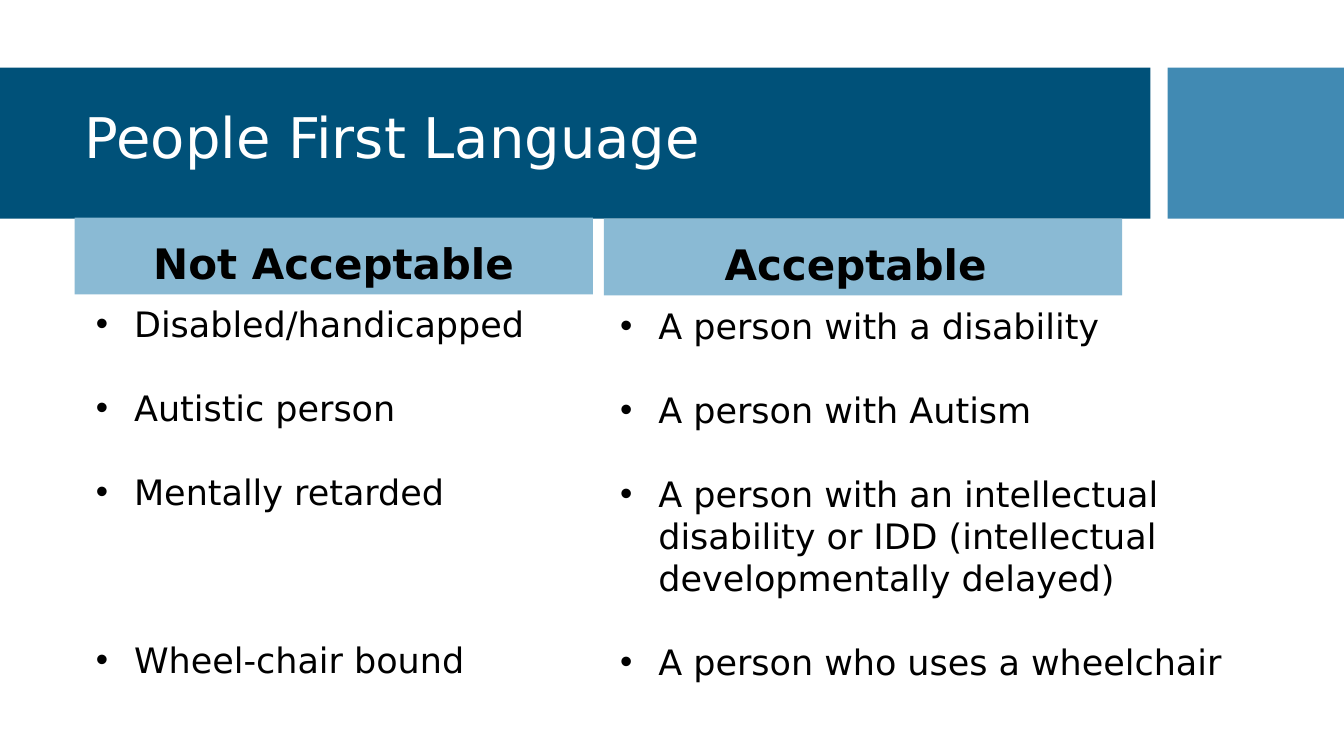
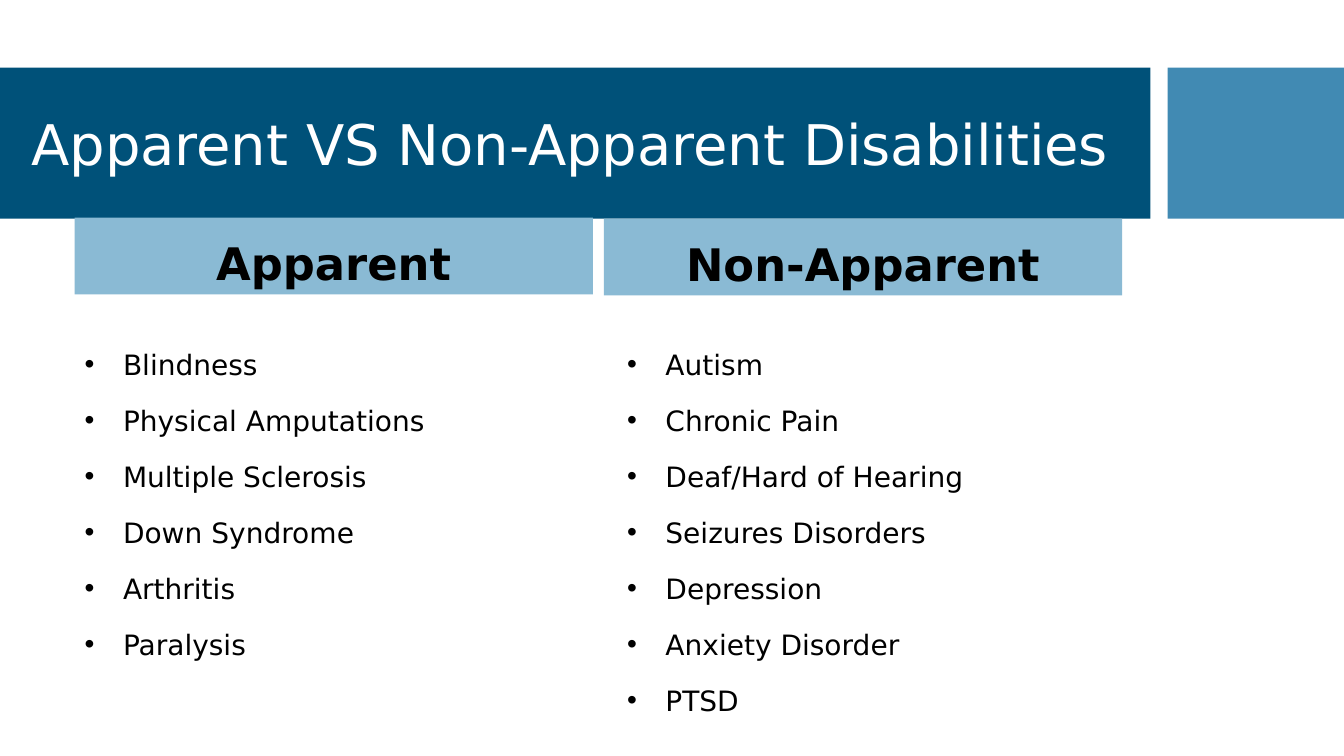
"""Build two comparison slides with a shared banded title style."""
import lxml.etree
import pptx
import pptx.dml.color
import pptx.enum.shapes
import pptx.enum.text
import pptx.oxml.ns
import pptx.util

Inches = pptx.util.Inches
Pt = pptx.util.Pt
Align = pptx.enum.text.PP_ALIGN
Anchor = pptx.enum.text.MSO_ANCHOR


class Deck:
    font = "DejaVu Sans"
    hues = {"band": "005179", "block": "418AB3", "head": "8ABAD4",
            "light": "FFFFFF", "text": "000000"}
    bands = [("band", 0, 11.41), ("block", 11.58, 1.75)]

    def __init__(self):
        self.file = pptx.Presentation()
        self.file.slide_width = Inches(13.33)
        self.file.slide_height = Inches(7.5)
        self.layout = self.file.slide_layouts[4]
        self.slide = None

    def color(self, name):
        return pptx.dml.color.RGBColor.from_string(self.hues[name])

    def paint(self, shape, hue):
        shape.fill.solid()
        shape.fill.fore_color.rgb = self.color(hue)

    def page(self):
        first = self.slide is None
        self.slide = self.file.slides.add_slide(self.layout)
        if first:
            for band in self.bands:
                self.band(*band)

    def band(self, hue, left, width):
        shape = self.slide.shapes.add_shape(
            pptx.enum.shapes.MSO_SHAPE.RECTANGLE,
            Inches(left), Inches(0.67), Inches(width), Inches(1.5))
        shape.shadow.inherit = False
        self.paint(shape, hue)
        shape.line.fill.background()
        self.layout.shapes.element.insert(2, shape.element)

    def place(self, slot, box, anchor):
        shape = self.slide.placeholders[slot]
        shape.left, shape.top, shape.width, shape.height = map(Inches, box)
        frame = shape.text_frame
        frame.word_wrap = True
        frame.auto_size = pptx.enum.text.MSO_AUTO_SIZE.NONE
        frame.vertical_anchor = anchor
        return shape

    def style(self, para, size, hue="text", bold=False, align=Align.LEFT,
              lead=1.0, gap=0):
        para.alignment = align
        para.line_spacing = lead
        para.space_before = Pt(gap)
        para.space_after = Pt(0)
        para.font.name = self.font
        para.font.size = Pt(size)
        para.font.bold = bold
        para.font.color.rgb = self.color(hue)

    def title(self, text, left, top):
        shape = self.place(0, (left, top, 11.11, 1.18), Anchor.MIDDLE)
        shape.text_frame.text = text
        self.style(shape.text_frame.paragraphs[0], 40, "light", lead=0.9)

    def head(self, slot, text, left, top, size):
        shape = self.place(slot, (left, top, 5.14, 0.76), Anchor.MIDDLE)
        self.paint(shape, "head")
        shape.text_frame.text = text
        self.style(shape.text_frame.paragraphs[0], size, bold=True,
                   align=Align.CENTER, lead=1.25)

    def heads(self, left, right, size):
        self.head(1, left, 0.74, 2.16, size)
        self.head(3, right, 5.99, 2.17, size)

    def items(self, slot, box, texts, size, gap, lead=1.0, last=None):
        frame = self.place(slot, box, Anchor.TOP).text_frame
        frame.text = "\n".join(texts)
        gaps = [0] + [gap] * (len(texts) - 1)
        if last is not None:
            gaps[-1] = last
        for para, space in zip(frame.paragraphs, gaps):
            props = para._p.get_or_add_pPr()
            props.set("marL", str(Inches(0.38)))
            props.set("indent", str(-Inches(0.38)))
            mark = lxml.etree.SubElement(props, pptx.oxml.ns.qn("a:buChar"))
            mark.set("char", "•")
            self.style(para, size, lead=lead, gap=space)


def main():
    deck = Deck()
    deck.page()
    deck.title("People First Language", 0.74, 0.8)
    deck.heads("Not Acceptable", "Acceptable ", 30)
    deck.items(2, (0.85, 2.95, 5.14, 3.79), [
        "Disabled/handicapped", "Autistic person", "Mentally retarded",
        "Wheel-chair bound"], 25, 30, last=90)
    deck.items(4, (6.05, 2.97, 6.47, 3.99), [
        "A person with a disability", "A person with Autism",
        "A person with an intellectual disability or IDD "
        "(intellectual developmentally delayed)",
        "A person who uses a wheelchair"], 25, 30)

    deck.page()
    deck.title("Apparent VS Non-Apparent Disabilities", 0.21, 0.87)
    deck.heads("Apparent", "Non-Apparent", 32)
    deck.items(2, (0.74, 3.31, 5.14, 3.18), [
        "Blindness", "Physical Amputations", "Multiple Sclerosis",
        "Down Syndrome", "Arthritis", "Paralysis"], 20, 10, 1.25)
    deck.items(4, (6.12, 3.31, 5.81, 3.18), [
        "Autism", "Chronic Pain", "Deaf/Hard of Hearing",
        "Seizures Disorders", "Depression", "Anxiety Disorder",
        "PTSD"], 20, 10, 1.25)
    deck.file.save("out.pptx")


if __name__ == "__main__":
    main()
